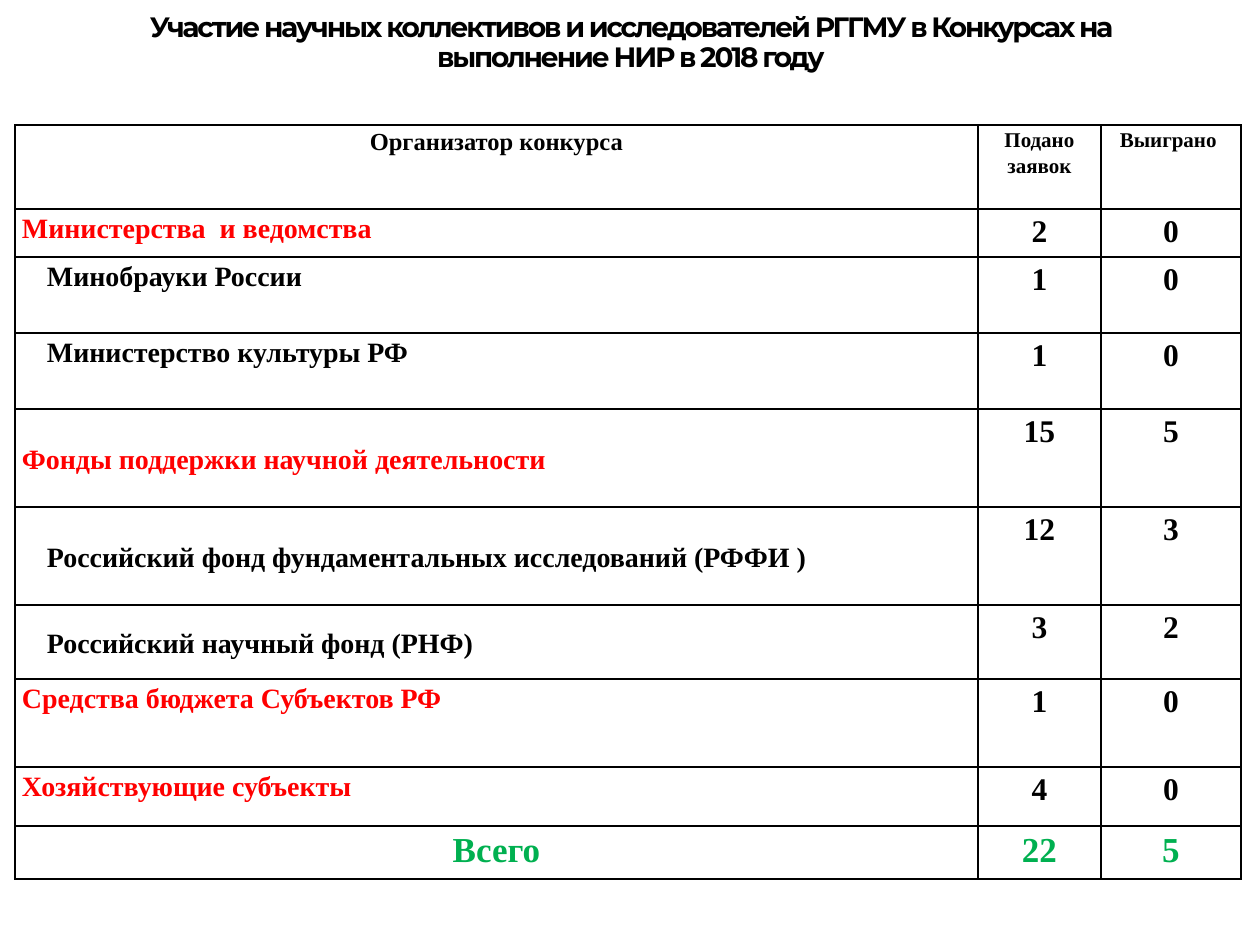
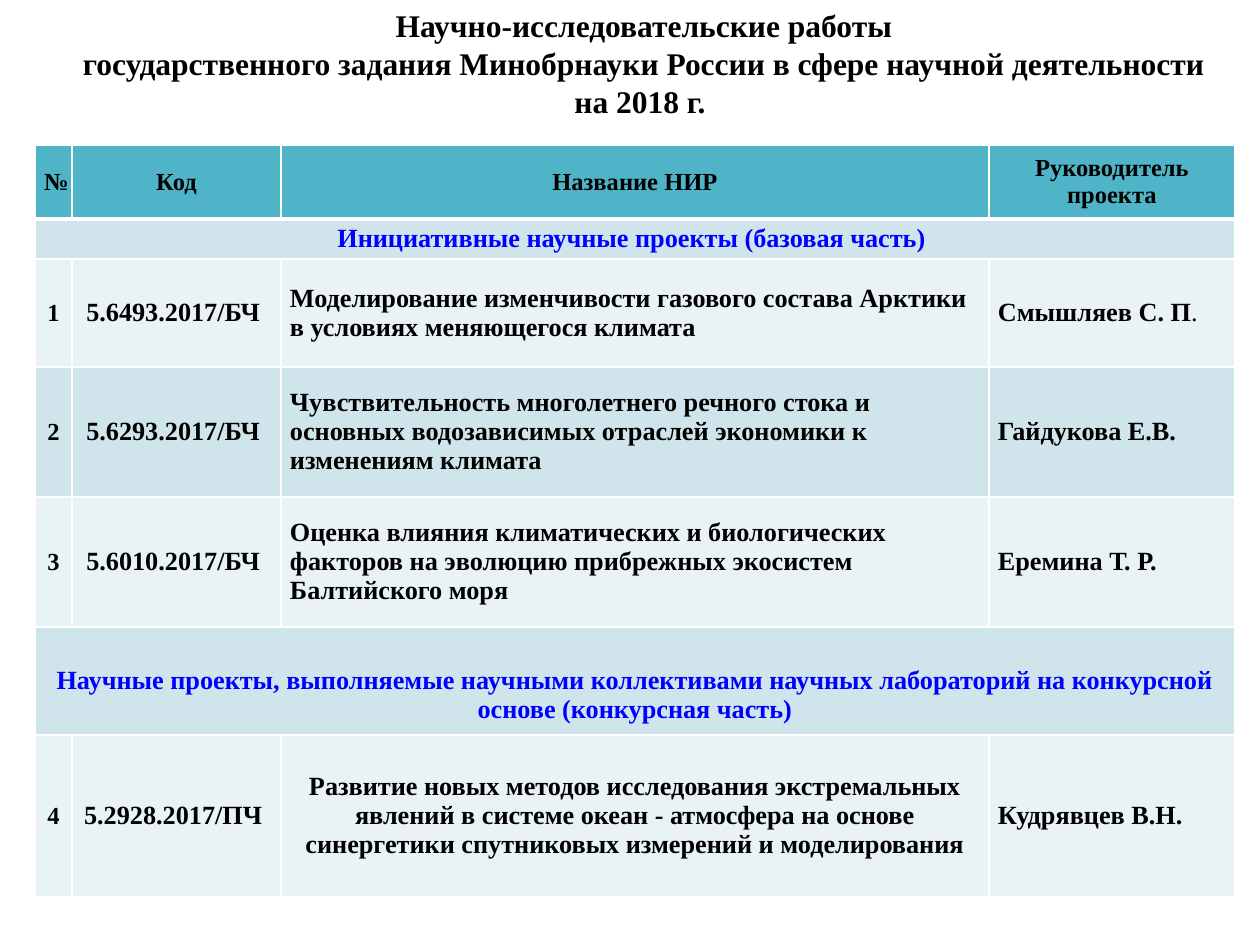
"""Build two slides of tables on research competitions and state-funded projects."""
import dataclasses

import lxml.etree
import pptx
import pptx.dml.color
import pptx.enum.text
import pptx.oxml.ns
import pptx.util

ALIGN = pptx.enum.text.PP_ALIGN
ANCHOR = pptx.enum.text.MSO_ANCHOR
EMU_PER_PX = 914400 / 126


@dataclasses.dataclass(frozen=True)
class Theme:
    black: str = "000000"
    white: str = "FFFFFF"
    red: str = "FF0000"
    green: str = "00B050"
    blue: str = "0000FF"
    header: str = "50B4C8"
    band_dark: str = "D0E5EB"
    band_light: str = "E9F2F5"
    body_font: str = "Times New Roman"
    title_font: str = "Montserrat"
    small: int = 12
    label: int = 14
    project: int = 15
    organizer: int = 16
    large: int = 18
    total: int = 20


THEME = Theme()

ORGANIZERS = [
    ("Министерства  и ведомства", 2, 0, "group", ANCHOR.TOP),
    ("Минобрауки России", 1, 0, "member", ANCHOR.TOP),
    ("Министерство культуры РФ", 1, 0, "member", ANCHOR.TOP),
    ("Фонды поддержки научной деятельности", 15, 5, "group", ANCHOR.MIDDLE),
    ("Российский фонд фундаментальных исследований (РФФИ )", 12, 3, "member", ANCHOR.MIDDLE),
    ("Российский научный фонд (РНФ)", 3, 2, "member", ANCHOR.MIDDLE),
    ("Средства бюджета Субъектов РФ", 1, 0, "group", ANCHOR.TOP),
    ("Хозяйствующие субъекты", 4, 0, "group", ANCHOR.TOP),
]

PROJECT_ROWS = [
    ("Инициативные научные проекты (базовая часть) ",),
    ("1", "5.6493.2017/БЧ ",
     "Моделирование изменчивости газового состава Арктики в условиях меняющегося климата",
     "Смышляев С. П"),
    ("2", "5.6293.2017/БЧ ",
     "Чувствительность многолетнего речного стока и основных водозависимых отраслей "
     "экономики к изменениям климата",
     "Гайдукова Е.В."),
    ("3", "5.6010.2017/БЧ ",
     "Оценка влияния климатических и биологических факторов на эволюцию прибрежных "
     "экосистем Балтийского моря",
     "Еремина Т. Р."),
    ("Научные проекты, выполняемые научными коллективами научных лабораторий "
     "на конкурсной основе (конкурсная часть)",),
    ("4", "5.2928.2017/ПЧ ",
     "Развитие новых методов исследования экстремальных явлений в системе океан - атмосфера "
     "на основе синергетики спутниковых измерений и моделирования",
     "Кудрявцев В.Н."),
]


def px(length):
    return pptx.util.Emu(round(length * EMU_PER_PX))


def style_paragraph(paragraph, size, color=THEME.black, font=THEME.body_font,
                    align=ALIGN.CENTER, spacing=None):
    paragraph.alignment = align
    paragraph.line_spacing = spacing
    paragraph.font.name = font
    paragraph.font.size = pptx.util.Pt(size)
    paragraph.font.bold = True
    paragraph.font.color.rgb = pptx.dml.color.RGBColor.from_string(color)


def add_title(slide, lines, box, anchor=ANCHOR.TOP, tracking=0, **style):
    frame = slide.shapes.add_textbox(*map(px, box)).text_frame
    frame.word_wrap = True
    frame.vertical_anchor = anchor
    frame.text = "\n".join(lines)
    for paragraph in frame.paragraphs:
        style_paragraph(paragraph, **style)
        if tracking:
            for run in paragraph.runs:
                run._r.get_or_add_rPr().set("spc", str(tracking))


def add_grid(slide, left, top, widths, heights):
    frame = slide.shapes.add_table(len(heights), len(widths), px(left), px(top),
                                   px(sum(widths)), px(sum(heights)))
    table = frame.table
    table.first_row = table.horz_banding = False
    for column, width in zip(table.columns, widths):
        column.width = px(width)
    for row, height in zip(table.rows, heights):
        row.height = px(height)
    return table


def set_borders(cell, color, top=1, bottom=1):
    properties = cell._tc.get_or_add_tcPr()
    for side, points in (("L", 1), ("R", 1), ("T", top), ("B", bottom)):
        line = lxml.etree.SubElement(properties, pptx.oxml.ns.qn(f"a:ln{side}"),
                                     w=str(pptx.util.Pt(points)))
        fill = lxml.etree.SubElement(line, pptx.oxml.ns.qn("a:solidFill"))
        lxml.etree.SubElement(fill, pptx.oxml.ns.qn("a:srgbClr"), val=color)


def set_fill(cell, color):
    if color is None:
        cell.fill.background()
    else:
        cell.fill.solid()
        cell.fill.fore_color.rgb = pptx.dml.color.RGBColor.from_string(color)


def write_cell(cell, text, margin, anchor=ANCHOR.TOP, indent=0, top=0, **style):
    cell.margin_left, cell.margin_right = px(margin + indent), px(margin)
    cell.margin_top, cell.margin_bottom = px(top), 0
    cell.vertical_anchor = anchor
    cell.text = text
    style_paragraph(cell.text_frame.paragraphs[0], **style)


def add_competition_table(slide):
    table = add_grid(slide, 15, 125, (963, 123, 140),
                     (84, 48, 76, 76, 98, 98, 74, 88, 59, 53))
    for cell in table.iter_cells():
        set_borders(cell, THEME.black)
        set_fill(cell, None)

    def write(row, column, text, size, **style):
        write_cell(table.cell(row, column), text, 7, size=size, spacing=1.15, **style)

    headings = ("Организатор конкурса", "Подано заявок", "Выиграно ")
    for column, heading in enumerate(headings):
        write(0, column, heading, THEME.small if column else THEME.label)
    for row, (name, submitted, won, level, anchor) in enumerate(ORGANIZERS, 1):
        is_group = level == "group"
        write(row, 0, name, THEME.organizer, anchor=anchor, align=ALIGN.LEFT,
              color=THEME.red if is_group else THEME.black, indent=0 if is_group else 25)
        for column, count in enumerate((submitted, won), 1):
            write(row, column, str(count), THEME.large)
    for column, text in enumerate(("Всего", "22", "5")):
        write(len(ORGANIZERS) + 1, column, text, THEME.total, color=THEME.green)


def add_project_table(slide):
    table = add_grid(slide, 35, 145, (37, 209, 708, 246),
                     (74, 40, 108, 130, 130, 108, 162))

    def write(row, column, text, size, **style):
        write_cell(table.cell(row, column), text, 9, ANCHOR.MIDDLE, size=size, **style)

    for row in range(len(table.rows)):
        band = THEME.band_dark if row % 2 else THEME.band_light
        for cell in table.rows[row].cells:
            set_borders(cell, THEME.white, top=3 if row == 1 else 1, bottom=1 if row else 3)
            set_fill(cell, band if row else THEME.header)
    for column, heading in enumerate(("№", "Код", "Название НИР", "Руководитель проекта")):
        write(0, column, heading, THEME.label)

    last_row = len(PROJECT_ROWS)
    for row, texts in enumerate(PROJECT_ROWS, 1):
        if len(texts) == 1:
            table.cell(row, 0).merge(table.cell(row, 3))
            write(row, 0, texts[0], THEME.project, color=THEME.blue, top=0 if row == 1 else 29)
            continue
        name_align = ALIGN.CENTER if row == last_row else ALIGN.LEFT
        aligns = (ALIGN.CENTER, ALIGN.CENTER, name_align, ALIGN.LEFT)
        for column, (text, align) in enumerate(zip(texts, aligns)):
            write(row, column, text, THEME.project if column else THEME.label, align=align)
    full_stop = table.cell(2, 3).text_frame.paragraphs[0].add_run()
    full_stop.text = "."
    full_stop.font.bold = False


def main():
    presentation = pptx.Presentation()
    presentation.slide_width, presentation.slide_height = px(1260), px(945)
    blank = presentation.slide_layouts[6]

    competitions = presentation.slides.add_slide(blank)
    add_title(competitions,
              ["Участие научных коллективов и исследователей РГГМУ в Конкурсах на "
               "выполнение НИР в 2018 году"],
              (64, 0, 1134, 87), ANCHOR.MIDDLE, tracking=-120,
              size=THEME.organizer, font=THEME.title_font, spacing=0.9)
    add_competition_table(competitions)

    projects = presentation.slides.add_slide(blank)
    add_project_table(projects)
    add_title(projects,
              ["Научно-исследовательские работы",
               "государственного задания Минобрнауки России в сфере научной деятельности "
               "на 2018 г. "],
              (64, 0, 1160, 127), size=THEME.large)

    presentation.save("out.pptx")


if __name__ == "__main__":
    main()
